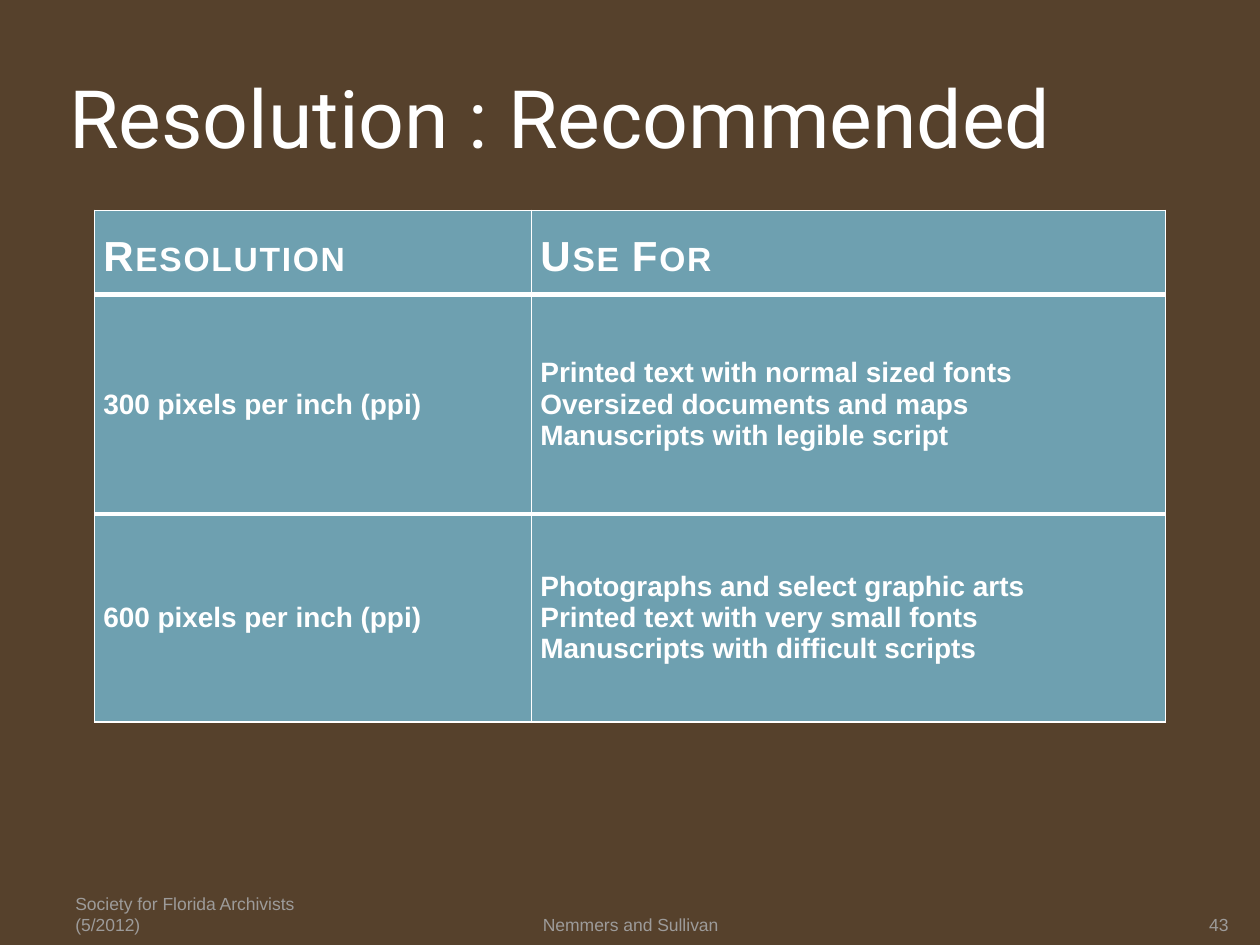
from dataclasses import dataclass

from lxml import etree
from pptx import Presentation
from pptx.dml.color import RGBColor
from pptx.enum.text import MSO_ANCHOR, PP_ALIGN
from pptx.oxml.ns import qn
from pptx.util import Inches, Pt

MIDDLE, BOTTOM, TOP = MSO_ANCHOR.MIDDLE, MSO_ANCHOR.BOTTOM, MSO_ANCHOR.TOP
LEFT, CENTER, RIGHT = PP_ALIGN.LEFT, PP_ALIGN.CENTER, PP_ALIGN.RIGHT

BROWN, TEAL, WHITE, GRAY = "56412C", "6EA0B0", "FFFFFF", "9D9B9A"
FOOTER_TOP, FOOTER_HEIGHT = 7.02, 0.4
THIN, THICK = 1, 3

COLUMN_WIDTHS = (3.47, 5.03)
ROW_HEIGHTS = (0.67, 1.74, 1.65)
TABLE_ROWS = (
    ("Resolution", "Use For"),
    ("300 pixels per inch (ppi)",
     "Printed text with normal sized fonts\n"
     "Oversized documents and maps\n"
     "Manuscripts with legible script"),
    ("600 pixels per inch (ppi)",
     "Photographs and select graphic arts\n"
     "Printed text with very small fonts\n"
     "Manuscripts with difficult scripts"),
)


@dataclass
class Label:
    text: str
    box: tuple[float, float, float, float]
    insets: tuple[float, float, float, float]  # left, top, right, bottom
    size: int = 10
    font: str = "Arial"
    color: str = GRAY
    anchor: MSO_ANCHOR = BOTTOM
    align: PP_ALIGN = LEFT


LABELS = (
    Label("Resolution : Recommended", (0.5, 0.3, 8.17, 1.25), (0.05,) * 4,
          46, "Roboto", WHITE, MIDDLE),
    Label("43", (8.92, FOOTER_TOP, 0.83, FOOTER_HEIGHT), (0,) * 4, align=RIGHT),
    Label("Society for Florida Archivists (5/2012)",
          (0.5, FOOTER_TOP, 2.33, FOOTER_HEIGHT), (0.1, 0.05, 0.1, 0)),
    Label("Nemmers and Sullivan", (3.42, FOOTER_TOP, 3.17, FOOTER_HEIGHT),
          (0, 0.05, 0, 0), align=CENTER),
)


def rgb(color: str) -> RGBColor:
    return RGBColor.from_string(color)


def set_font(font, name: str, size: int, color: str, bold: bool = False) -> None:
    font.name, font.size, font.bold = name, Pt(size), bold
    font.color.rgb = rgb(color)


def set_margins(target, insets: tuple) -> None:
    (target.margin_left, target.margin_top,
     target.margin_right, target.margin_bottom) = map(Inches, insets)


def add_label(slide, label: Label) -> None:
    frame = slide.shapes.add_textbox(*map(Inches, label.box)).text_frame
    frame.word_wrap = True
    frame.vertical_anchor = label.anchor
    set_margins(frame, label.insets)
    paragraph = frame.paragraphs[0]
    paragraph.text, paragraph.alignment = label.text, label.align
    set_font(paragraph.font, label.font, label.size, label.color)


def set_borders(cell, top: int, bottom: int) -> None:
    properties = cell._tc.get_or_add_tcPr()
    widths = {"a:lnL": THIN, "a:lnR": THIN, "a:lnT": top, "a:lnB": bottom}
    for position, (tag, width) in enumerate(widths.items()):
        line = etree.Element(qn(tag), w=str(Pt(width)))
        fill = etree.SubElement(line, qn("a:solidFill"))
        etree.SubElement(fill, qn("a:srgbClr"), val=WHITE)
        properties.insert(position, line)


def fill_cell(cell, text: str, is_header: bool) -> None:
    cell.fill.solid()
    cell.fill.fore_color.rgb = rgb(TEAL)
    cell.vertical_anchor = TOP if is_header else MIDDLE
    set_margins(cell, (0.07, 0, 0.07, 0))
    cell.text = text
    for paragraph in cell.text_frame.paragraphs:
        set_font(paragraph.font, "Arial", 24 if is_header else 16, WHITE, True)
        if is_header:
            paragraph.line_spacing = 1.5
            # Letter spacing and small capitals
            run_properties = paragraph.runs[0].font._element
            run_properties.set("spc", "100")
            run_properties.set("cap", "small")


def add_resolution_table(slide) -> None:
    table = slide.shapes.add_table(
        len(ROW_HEIGHTS), len(COLUMN_WIDTHS), Inches(0.75), Inches(1.67),
        Inches(sum(COLUMN_WIDTHS)), Inches(sum(ROW_HEIGHTS))).table
    table.horz_banding = False
    for column, width in zip(table.columns, COLUMN_WIDTHS):
        column.width = Inches(width)
    last = len(TABLE_ROWS) - 1
    for index, texts in enumerate(TABLE_ROWS):
        table.rows[index].height = Inches(ROW_HEIGHTS[index])
        for cell, text in zip(table.rows[index].cells, texts):
            fill_cell(cell, text, index == 0)
            # Thick rules between rows, thin ones around the table
            set_borders(cell, THIN if index == 0 else THICK,
                        THIN if index == last else THICK)


def main() -> None:
    presentation = Presentation()
    presentation.slide_width, presentation.slide_height = Inches(10), Inches(7.5)
    slide = presentation.slides.add_slide(presentation.slide_layouts[6])
    slide.background.fill.solid()
    slide.background.fill.fore_color.rgb = rgb(BROWN)

    # Table, then title and footer
    add_resolution_table(slide)
    for label in LABELS:
        add_label(slide, label)
    presentation.save("out.pptx")


if __name__ == "__main__":
    main()
